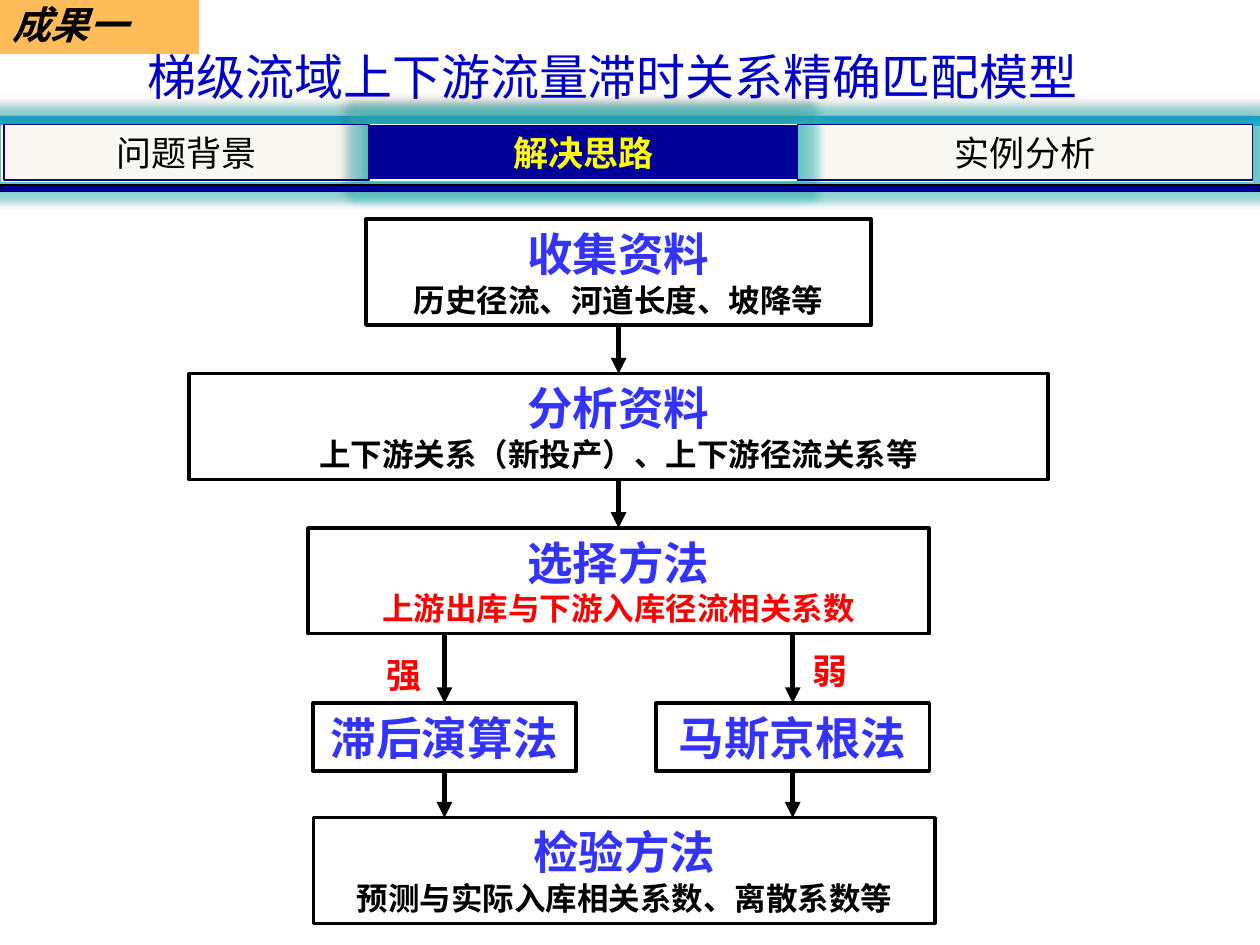
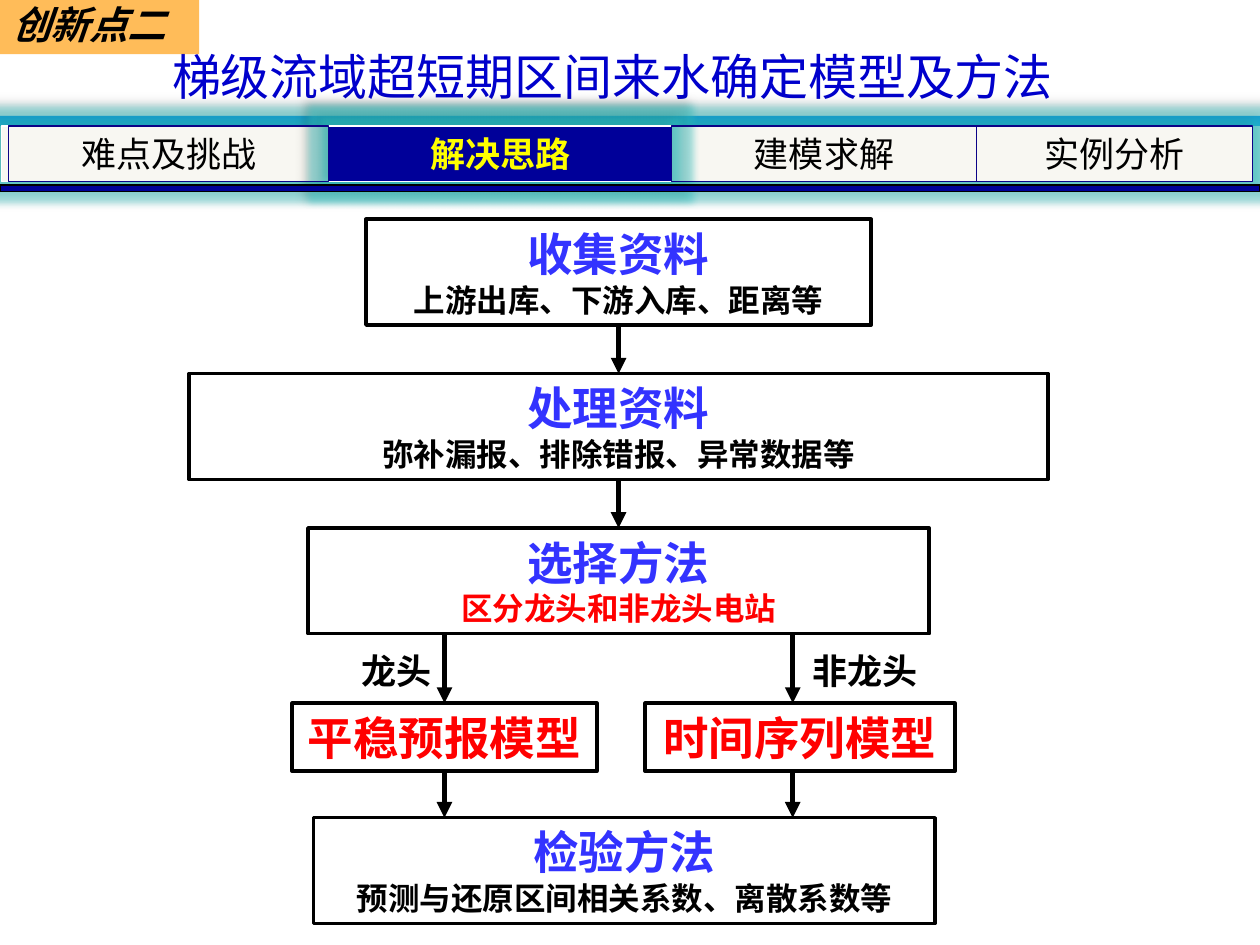
from lxml import etree
from pptx import Presentation
from pptx.dml.color import RGBColor
from pptx.enum.shapes import MSO_CONNECTOR, MSO_SHAPE
from pptx.enum.text import MSO_ANCHOR, MSO_AUTO_SIZE, PP_ALIGN
from pptx.oxml.ns import qn
from pptx.util import Pt

RECTANGLE = MSO_SHAPE.RECTANGLE
STRAIGHT = MSO_CONNECTOR.STRAIGHT
MIDDLE = MSO_ANCHOR.MIDDLE
LEFT, CENTER = PP_ALIGN.LEFT, PP_ALIGN.CENTER
NO_FIT = MSO_AUTO_SIZE.NONE
TOP_SIDE, BOTTOM_SIDE = 0, 2

# Content: tabs give their text and the edges between them; branches give text, centre and width
SLIDES = [
    {
        "tag": "成果一",
        "title": "梯级流域上下游流量滞时关系精确匹配模型",
        "tabs": ["问题背景", "解决思路", "实例分析"],
        "tab_edges": [2.2, 210.8, 455.8, 715.7],
        "tab_top": 71.3,
        "steps": [
            ("收集资料", "历史径流、河道长度、坡降等"),
            ("分析资料", "上下游关系（新投产）、上下游径流关系等"),
            ("选择方法", "上游出库与下游入库径流相关系数"),
        ],
        "branches": [("滞后演算法", 254, 150.5), ("马斯京根法", 453, 156.2)],
        "branch_color": "blue",
        "labels": [("强", 213.8, 369.4, 34.6), ("弱", 457.2, 367.2, 34.6)],
        "label_color": "red",
        "check": ("检验方法", "预测与实际入库相关系数、离散系数等"),
    },
    {
        "tag": "创新点二",
        "title": "梯级流域超短期区间来水确定模型及方法",
        "tabs": ["难点及挑战", "解决思路", "建模求解", "实例分析"],
        "tab_edges": [5, 187.9, 383.8, 558, 715.7],
        "tab_top": 72,
        "steps": [
            ("收集资料", "上游出库、下游入库、距离等"),
            ("处理资料", "弥补漏报、排除错报、异常数据等"),
            ("选择方法", "区分龙头和非龙头电站"),
        ],
        "branches": [("平稳预报模型", 254, 174.2), ("时间序列模型", 457.2, 177.1)],
        "branch_color": "red",
        "labels": [("龙头", 199.4, 367.2, 55.4), ("非龙头", 457.2, 367.2, 75.6)],
        "label_color": "black",
        "check": ("检验方法", "预测与还原区间相关系数、离散系数等"),
    },
]
ACTIVE_TAB = 1

# Shared style
COLORS = {
    "black": "000000", "white": "FFFFFF", "red": "FF0000", "blue": "3333FF",
    "title": "0000CC", "band": "0099FF", "tag": "FF9900", "bar": "F8F7F2",
    "tab_line": "0C0387", "navy": "000099", "yellow": "FFFF00", "glow": "33CCCC",
}
HEADER_FONT, FLOW_FONT = "Noto Sans CJK SC", "Arial"

# Flow geometry
FLOW_CENTER, CHECK_CENTER = 353.5, 356.8
FLOW_TOP, FLOW_PITCH, STEP_HEIGHT = 125.3, 88.2, 60.5
STEP_WIDTHS = [288.7, 491, 355]
BRANCH_TOP, BRANCH_HEIGHT = 401.8, 38.9
BRANCH_ARROWS = [254, 453]
CHECK_TOP = 467.3


def color(name):
    return RGBColor.from_string(COLORS[name])


def add_run(paragraph, text, size, color_name, font=FLOW_FONT, bold=False, italic=False):
    run = paragraph.add_run()
    run.text = text
    run.font.name, run.font.size = font, Pt(size)
    run.font.bold, run.font.italic = bold, italic
    run.font.color.rgb = color(color_name)
    properties = run.font._element
    east_asian = etree.Element(qn("a:ea"), typeface=font)
    properties.find(qn("a:latin")).addnext(east_asian)


def prepare_text(shape, wrap=True):
    frame = shape.text_frame
    frame.auto_size = NO_FIT
    frame.word_wrap = wrap
    frame.vertical_anchor = MIDDLE
    frame.margin_top = frame.margin_bottom = 0
    return frame


def add_box(slide, left, top, width, height, fill=None, line=None, line_width=0.75):
    shape = slide.shapes.add_shape(RECTANGLE, Pt(left), Pt(top), Pt(width), Pt(height))
    shape.shadow.inherit = False
    if fill:
        shape.fill.solid()
        shape.fill.fore_color.rgb = color(fill)
    else:
        shape.fill.background()
    if line:
        shape.line.color.rgb = color(line)
        shape.line.width = Pt(line_width)
    else:
        shape.line.fill.background()
    return shape


def add_effect_color(effect, color_name, alpha):
    color_element = etree.SubElement(effect, qn("a:srgbClr"), val=COLORS[color_name])
    etree.SubElement(color_element, qn("a:alpha"), val=str(alpha * 1000))


def add_glow_and_shadow(shape):
    effects = shape.element.spPr.find(qn("a:effectLst"))
    glow = etree.SubElement(effects, qn("a:glow"), rad=str(Pt(8)))
    add_effect_color(glow, "glow", 40)
    shadow = etree.SubElement(effects, qn("a:outerShdw"), blurRad=str(Pt(4)),
                              dist=str(Pt(3)), dir=str(225 * 60000))
    add_effect_color(shadow, "black", 40)


def add_flow_box(slide, center, top, width, height, lines):
    """Add an outlined box; each line is (text, size, color)."""
    shape = add_box(slide, center - width / 2, top, width, height, line="black", line_width=2)
    frame = prepare_text(shape)
    for index, (text, size, color_name) in enumerate(lines):
        paragraph = frame.add_paragraph() if index else frame.paragraphs[0]
        paragraph.alignment = CENTER
        add_run(paragraph, text, size, color_name, bold=True)
    return shape


def add_arrow(slide, x, upper, lower):
    """Drop an arrow between two boxes, joined where it meets a side's middle."""
    start = upper.top + upper.height
    arrow = slide.shapes.add_connector(STRAIGHT, Pt(x), start, Pt(x), lower.top)
    for box, join, side in ((upper, arrow.begin_connect, BOTTOM_SIDE),
                            (lower, arrow.end_connect, TOP_SIDE)):
        if abs(box.left + box.width / 2 - Pt(x)) < Pt(0.5):
            join(box, side)
    arrow.line.color.rgb = color("black")
    arrow.line.width = Pt(3)
    arrow.line._get_or_add_ln().append(etree.Element(qn("a:tailEnd"), type="triangle"))
    etree.SubElement(arrow.element.spPr, qn("a:effectLst"))


def add_header(slide, content):
    # Title
    title = slide.shapes.title
    title.left, title.top, title.width, title.height = Pt(5), Pt(23), Pt(690), Pt(41)
    paragraph = prepare_text(title).paragraphs[0]
    paragraph.alignment = CENTER
    add_run(paragraph, content["title"], 28, "title", HEADER_FONT)

    # Corner tag
    tag = add_box(slide, 0, 0, 113.8, 31, fill="tag")
    fill_color = tag.element.spPr.find(qn("a:solidFill"))[0]
    etree.SubElement(fill_color, qn("a:alpha"), val="65000")
    paragraph = prepare_text(tag).paragraphs[0]
    paragraph.alignment, paragraph.line_spacing = LEFT, 0.9
    add_run(paragraph, content["tag"], 22, "black", bold=True, italic=True)


def add_tabs(slide, content):
    add_glow_and_shadow(add_box(slide, 0.7, 72, 715, 31.7, fill="bar", line="white"))
    edges = content["tab_edges"]
    tabs = list(enumerate(zip(content["tabs"], edges, edges[1:])))
    # The active tab lies beneath its neighbours' outlines
    for index, (text, left, right) in sorted(tabs, key=lambda tab: tab[0] != ACTIVE_TAB):
        active = index == ACTIVE_TAB
        shape = add_box(slide, left, content["tab_top"], right - left, 31.7,
                        fill="navy" if active else None,
                        line="white" if active else "tab_line")
        if active:
            add_glow_and_shadow(shape)
        paragraph = prepare_text(shape).paragraphs[0]
        paragraph.alignment = CENTER
        add_run(paragraph, text, 20, "yellow" if active else "black", HEADER_FONT, bold=active)
    add_box(slide, 0, 105.8, 720, 3.6, fill="navy", line="black")


def add_flow(slide, content):
    # Boxes
    steps = []
    for index, ((heading, detail), width) in enumerate(zip(content["steps"], STEP_WIDTHS)):
        detail_color = "red" if index == len(STEP_WIDTHS) - 1 else "black"
        steps.append(add_flow_box(slide, FLOW_CENTER, FLOW_TOP + index * FLOW_PITCH, width,
                                  STEP_HEIGHT, [(heading, 26, "blue"), (detail, 18, detail_color)]))
    heading, detail = content["check"]
    check = add_flow_box(slide, CHECK_CENTER, CHECK_TOP, STEP_WIDTHS[-1], STEP_HEIGHT,
                         [(heading, 26, "blue"), (detail, 18, "black")])
    branches = [add_flow_box(slide, center, BRANCH_TOP, width, BRANCH_HEIGHT,
                             [(text, 26, content["branch_color"])])
                for text, center, width in content["branches"]]

    # Arrows
    for upper, lower in zip(steps, steps[1:]):
        add_arrow(slide, FLOW_CENTER, upper, lower)
    for x, branch in zip(BRANCH_ARROWS, branches):
        add_arrow(slide, x, steps[-1], branch)
        add_arrow(slide, x, branch, check)

    # Branch labels
    for text, left, top, width in content["labels"]:
        label = slide.shapes.add_textbox(Pt(left), Pt(top), Pt(width), Pt(31.7))
        paragraph = prepare_text(label, wrap=False).paragraphs[0]
        add_run(paragraph, text, 20, content["label_color"], bold=True)


def main():
    presentation = Presentation()
    presentation.slide_width, presentation.slide_height = Pt(720), Pt(540)
    layout = presentation.slide_layouts.get_by_name("Title Only")
    for number, content in enumerate(SLIDES):
        slide = presentation.slides.add_slide(layout)
        if number == 0:
            # The blue band belongs to the master, behind everything
            band = add_box(slide, 0, 66.2, 720, 5.8, fill="band")
            presentation.slide_master.shapes.element.insert(2, band.element)
        add_header(slide, content)
        add_flow(slide, content)
        add_tabs(slide, content)
    presentation.save("out.pptx")


if __name__ == "__main__":
    main()
